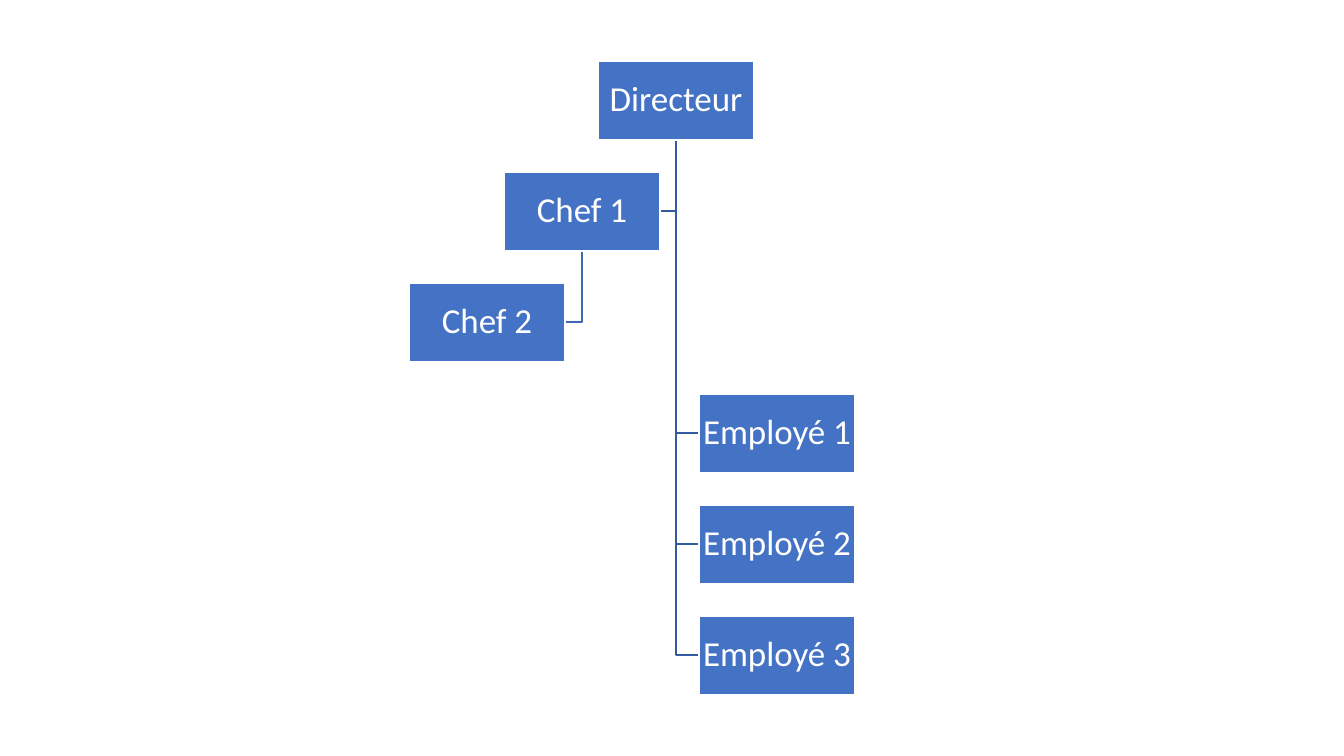
from pptx import Presentation
from pptx.dml.color import RGBColor
from pptx.enum.shapes import MSO_SHAPE
from pptx.enum.text import MSO_ANCHOR, PP_ALIGN
from pptx.util import Pt

RECTANGLE = MSO_SHAPE.RECTANGLE
MIDDLE = MSO_ANCHOR.MIDDLE
CENTER = PP_ALIGN.CENTER

SLIDE_WIDTH, SLIDE_HEIGHT = 1344, 756
EMU_PER_PX = 12192000 / SLIDE_WIDTH
BOX_WIDTH, BOX_HEIGHT = 156, 79
FIRST_TOP, ROW_STEP = 61, 111
INSET = 2


def px(length):
    return round(length * EMU_PER_PX)


def color(hex_string):
    return RGBColor.from_string(hex_string)


presentation = Presentation()
presentation.slide_width = px(SLIDE_WIDTH)
presentation.slide_height = px(SLIDE_HEIGHT)
slide = presentation.slides.add_slide(presentation.slide_layouts[6])

# Each person: left edge and row
people = {
    "Directeur": (598, 0),
    "Employé 1": (699, 3),
    "Employé 2": (699, 4),
    "Employé 3": (699, 5),
    "Chef 1": (504, 1),
    "Chef 2": (409, 2),
}

# Elbow lines: from the bottom of the superior to the near side of the report
links = [
    ("Chef 1", "Chef 2", "3E67B2"),
    ("Directeur", "Chef 1", "365B9D"),
    ("Directeur", "Employé 3", "365B9D"),
    ("Directeur", "Employé 2", "365B9D"),
    ("Directeur", "Employé 1", "365B9D"),
]
for superior, report, line_color in links:
    superior_left, superior_row = people[superior]
    report_left, report_row = people[report]
    trunk_x = superior_left + BOX_WIDTH // 2
    start_y = FIRST_TOP + superior_row * ROW_STEP + BOX_HEIGHT
    end_y = FIRST_TOP + report_row * ROW_STEP + BOX_HEIGHT // 2
    end_x = report_left if report_left > trunk_x else report_left + BOX_WIDTH
    builder = slide.shapes.build_freeform(trunk_x, start_y, scale=EMU_PER_PX)
    builder.add_line_segments([(trunk_x, end_y), (end_x, end_y)], close=False)
    elbow = builder.convert_to_shape()
    elbow.shadow.inherit = False
    elbow.fill.background()
    elbow.line.color.rgb = color(line_color)
    elbow.line.width = Pt(1)

# Boxes with names
for name, (left, row) in people.items():
    box = slide.shapes.add_shape(
        RECTANGLE, px(left), px(FIRST_TOP + row * ROW_STEP),
        px(BOX_WIDTH), px(BOX_HEIGHT))
    box.shadow.inherit = False
    box.fill.solid()
    box.fill.fore_color.rgb = color("4472C4")
    box.line.color.rgb = color("FFFFFF")
    box.line.width = Pt(1)

    frame = box.text_frame
    frame.word_wrap = True
    frame.vertical_anchor = MIDDLE
    frame.margin_left = frame.margin_right = px(INSET)
    frame.margin_top = frame.margin_bottom = px(INSET)
    paragraph = frame.paragraphs[0]
    paragraph.alignment = CENTER
    paragraph.line_spacing = 0.9
    run = paragraph.add_run()
    run.text = name
    run.font.name = "Calibri"
    run.font.size = Pt(25)
    run.font.color.rgb = color("FFFFFF")

presentation.save("out.pptx")
